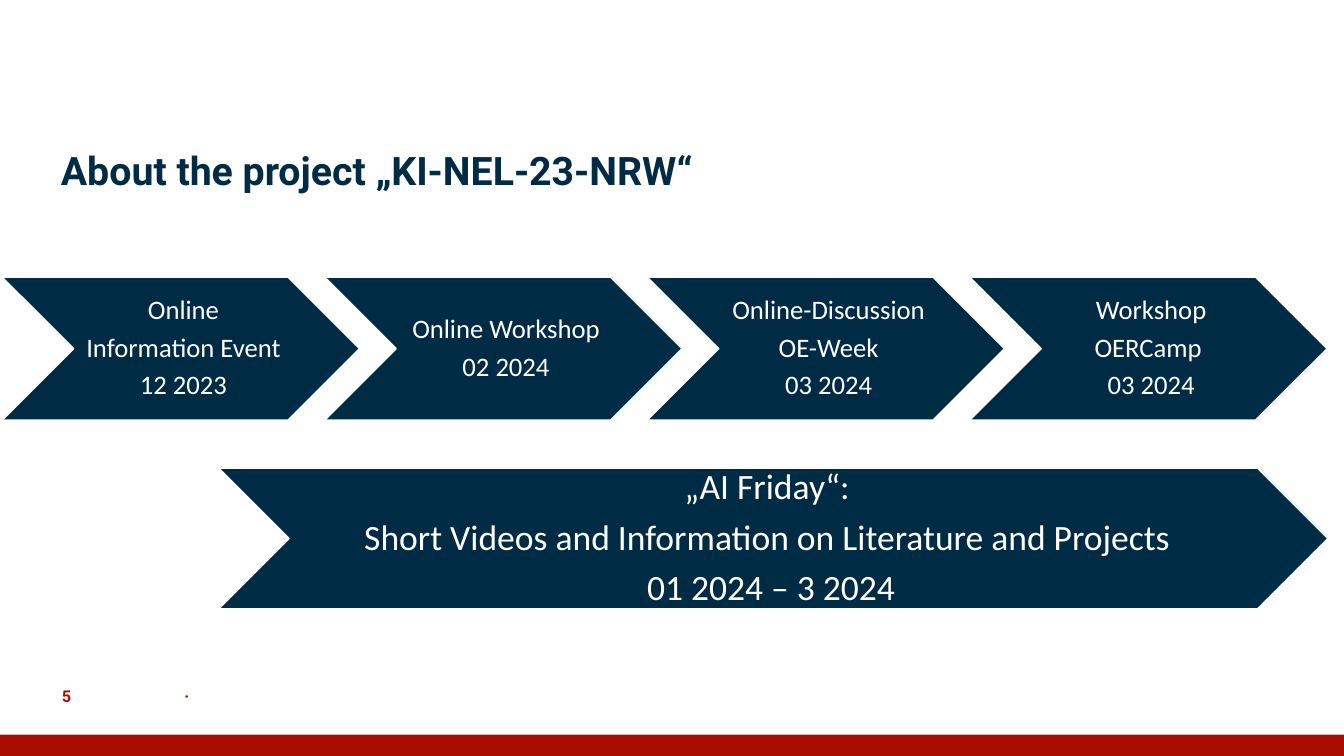
from pptx import Presentation
from pptx.dml.color import RGBColor
from pptx.enum.shapes import MSO_SHAPE
from pptx.enum.text import MSO_ANCHOR, PP_ALIGN
from pptx.util import Inches, Pt

CHEVRON, RECT = MSO_SHAPE.CHEVRON, MSO_SHAPE.RECTANGLE
MIDDLE, LEFT, CENTER = MSO_ANCHOR.MIDDLE, PP_ALIGN.LEFT, PP_ALIGN.CENTER
NAVY, RED, WHITE = "002B44", "A80D00", "FFFFFF"
WIDE, HIGH = 12.6, 7.09


def paint(color, hue):
    color.rgb = RGBColor.from_string(hue)


def write(shape, lines, hue, align, look, pads=(0, 0, 0, 0), gap=0):
    frame = shape.text_frame
    frame.word_wrap = True
    frame.vertical_anchor = MIDDLE
    for side, pad in zip(("left", "top", "right", "bottom"), pads):
        setattr(frame, "margin_" + side, Inches(pad))
    frame.text = "\n".join(lines)
    for para in frame.paragraphs:
        para.alignment = align
        para.line_spacing = 0.9
        para.space_before = Pt(0)
        para.space_after = Pt(gap)
        for key, value in look.items():
            setattr(para.font, key, value)
        paint(para.font.color, hue)


deck = Presentation()
deck.slide_width, deck.slide_height = Inches(WIDE), Inches(HIGH)
slide = deck.slides.add_slide(deck.slide_layouts[5])
shapes = slide.shapes

# Footer band, page number and dot
band = shapes.add_shape(RECT, 0, Inches(HIGH - 0.2), Inches(WIDE), Inches(0.2))
band.shadow.inherit = False
band.fill.solid()
paint(band.fill.fore_color, RED)
band.line.fill.background()

small = {"name": "Roboto", "size": Pt(11), "bold": True}
for left, mark in ((0.58, "5"), (1.73, "·")):
    box = shapes.add_textbox(Inches(left), Inches(6.35), Inches(0.37), Inches(0.38))
    write(box, [mark], RED, LEFT, small)

# Title
title = shapes.title
title.left, title.top = Inches(0.57), Inches(1.38)
title.width, title.height = Inches(10.87), Inches(0.48)
write(title, ["About the project „KI-NEL-23-NRW“"], NAVY, LEFT,
      {"name": "Roboto", "size": Pt(26.5), "bold": True})

# Four events in a row, one long step below
events = [
    ["Online", "Information Event", "12 2023"],
    ["Online Workshop", "02 2024"],
    ["Online-Discussion", "OE-Week", "03 2024"],
    ["Workshop", "OERCamp ", "03 2024"],
]
friday = ["„AI Friday“: ",
          "Short Videos and Information on Literature and Projects ",
          "01 2024 – 3 2024"]
start, step = 0.02, 3.024
tight, loose = (0.08, 0.03, 0.03, 0.03), (0.22, 0.04, 0.26, 0.04)
steps = [(start + col * step, 2.6, 3.35, 1.34, 18, tight, lines)
         for col, lines in enumerate(events)]
steps.append((2.05, 4.39, 10.4, 1.32, 24, loose, friday))

for left, top, width, height, size, pads, lines in steps:
    arrow = shapes.add_shape(CHEVRON, Inches(left), Inches(top),
                             Inches(width), Inches(height))
    arrow.shadow.inherit = False
    arrow.fill.solid()
    paint(arrow.fill.fore_color, NAVY)
    paint(arrow.line.color, WHITE)
    arrow.line.width = Pt(1)
    write(arrow, lines, WHITE, CENTER, {"name": "Calibri", "size": Pt(size)},
          pads, gap=round(size * 0.33, 1))

deck.save("out.pptx")
